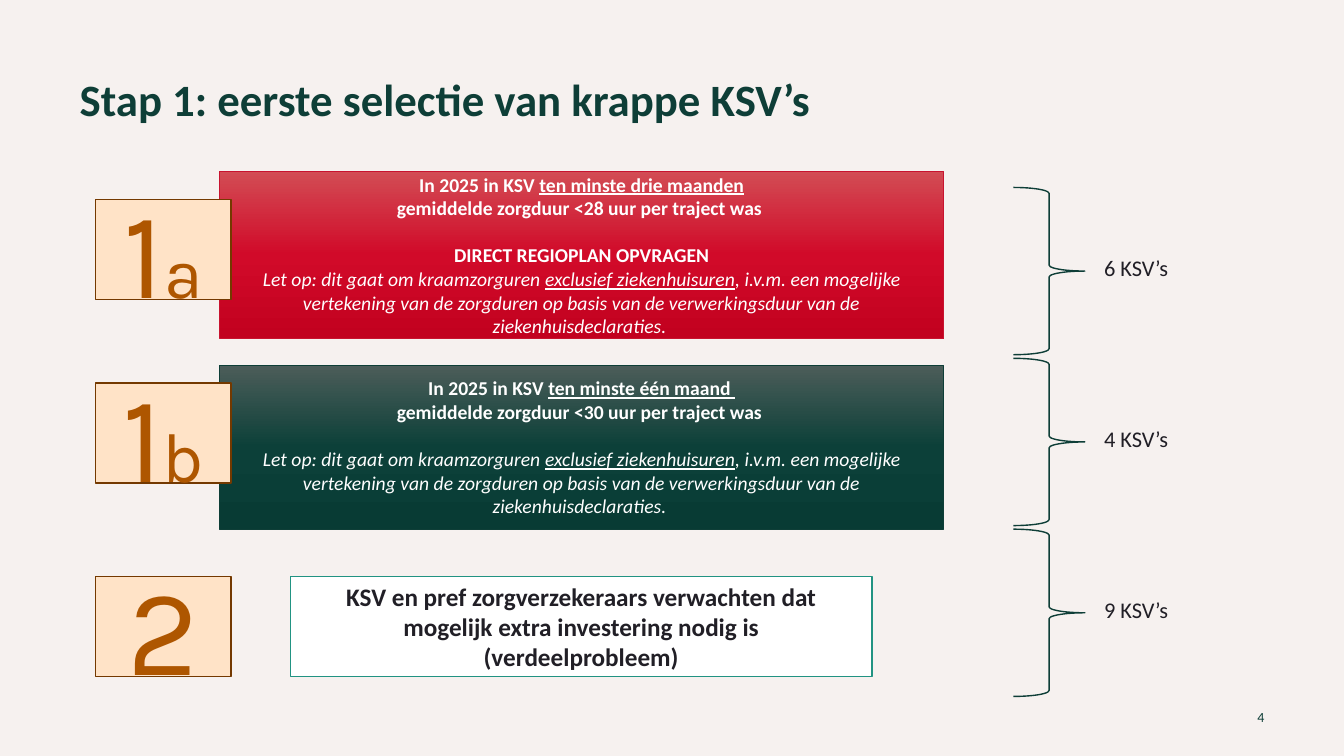
from copy import deepcopy
from pptx import Presentation
from pptx.dml.color import RGBColor
from pptx.enum.shapes import MSO_SHAPE as Shape
from pptx.enum.text import MSO_ANCHOR as Anchor, MSO_AUTO_SIZE as AutoSize, PP_ALIGN as Align
from pptx.oxml.ns import qn
from pptx.util import Inches, Pt

GREEN, DARK, WHITE = "0E3E37", "211F26", "FFFFFF"
BOLD, BOLD_LINK = {"bold": True}, {"bold": True, "underline": True}
ITALIC, ITALIC_LINK = {"italic": True}, {"italic": True, "underline": True}


def write(shape, paragraphs, size, color, font="Calibri", align=Align.CENTER,
          anchor=Anchor.MIDDLE, inset=None, line_spacing=None, gaps=None):
    """Fill a shape with paragraphs of (text, run format) pairs; gaps maps paragraph index to space before."""
    frame = shape.text_frame
    frame.word_wrap, frame.auto_size = True, AutoSize.NONE
    frame.vertical_anchor = anchor
    if inset is not None:
        frame.margin_left = frame.margin_top = frame.margin_right = frame.margin_bottom = Inches(inset)
    for index, runs in enumerate(paragraphs):
        para = frame.paragraphs[0] if index == 0 else frame.add_paragraph()
        para.alignment = align
        if line_spacing:
            para.line_spacing = line_spacing
        if gaps and index in gaps:
            para.space_before = Pt(gaps[index])
        for text, style in runs:
            span = para.add_run()
            span.text = text
            span.font.name = font
            span.font.size = Pt(style.get("size", size))
            span.font.bold = style.get("bold", False)
            span.font.italic = style.get("italic", False)
            span.font.underline = style.get("underline", False)
            span.font.color.rgb = RGBColor.from_string(color)


def add_box(place, fill, line, width=1, kind=Shape.RECTANGLE):
    """Add a shape; fill is a colour, a list of top-to-bottom gradient colours, or None."""
    box = slide.shapes.add_shape(kind, *map(Inches, place))
    box.shadow.inherit = False
    box.line.color.rgb = RGBColor.from_string(line)
    box.line.width = Pt(width)
    if fill is None:
        box.fill.background()
    elif isinstance(fill, str):
        box.fill.solid()
        box.fill.fore_color.rgb = RGBColor.from_string(fill)
    else:
        box.fill.gradient()
        box.fill.gradient_angle = 270
        stops = box._element.spPr.find(qn("a:gradFill")).find(qn("a:gsLst"))
        stops.insert(1, deepcopy(stops[0]))
        for index, stop in enumerate(box.fill.gradient_stops):
            stop.position = index / 2
            stop.color.rgb = RGBColor.from_string(fill[index])
    return box


deck = Presentation()
deck.slide_width, deck.slide_height = Inches(13.33), Inches(7.5)
slide = deck.slides.add_slide(deck.slide_layouts[5])
slide.background.fill.solid()
slide.background.fill.fore_color.rgb = RGBColor.from_string("F6F1EF")

title = slide.shapes.title
title.left, title.top, title.width, title.height = map(Inches, (0.79, 0.79, 11.56, 0.91))
write(title, [[("Stap 1: eerste selectie van krappe KSV’s", BOLD)]], 32, GREEN,
      align=Align.LEFT, anchor=Anchor.TOP, inset=0, line_spacing=0.85)

# Criteria
note = [
    ("Let op: dit gaat om kraamzorguren ", ITALIC),
    ("exclusief ziekenhuisuren", ITALIC_LINK),
    (", i.v.m. een mogelijke vertekening van de zorgduren op basis van de "
     "verwerkingsduur van de ziekenhuisdeclaraties. ", ITALIC),
]
criteria = [
    (1.7, 1.66, ["D24C54", "D10A29", "C2011F"], "C8132F", "ten minste drie maanden", 28,
     [[("DIRECT REGIOPLAN OPVRAGEN", BOLD)]]),
    (3.62, 1.63, ["4C5D59", "0C4039", "083B34"], GREEN, "ten minste één maand ", 30, []),
]
for top, height, gradient, line, period, hours, action in criteria:
    box = add_box((2.18, top, 7.18, height), gradient, line, 0.5)
    condition = [
        [("In 2025 in KSV ", BOLD), (period, BOLD_LINK)],
        [(f"gemiddelde zorgduur <{hours} uur per traject was ", BOLD)],
    ]
    write(box, condition + action + [note], 14, WHITE, gaps={2: 17})

expectation = add_box((2.88, 5.72, 5.77, 0.99), WHITE, "219382")
write(expectation, [
    [("KSV en pref zorgverzekeraars verwachten dat mogelijk extra investering nodig is", BOLD)],
    [("(verdeelprobleem)", BOLD)],
], 18, DARK)

# Step numbers
for top, number, letter in [(1.98, "1", "a"), (3.8, "1", "b"), (5.72, "2", "")]:
    badge = add_box((0.95, top, 1.34, 0.99), "FFE3C7", "743900")
    runs = [(number, {})] + ([(letter, {"size": 50})] if letter else [])
    write(badge, [runs], 88, "AE5600", font="Karla")

# Braces with counts
for row, count in enumerate([6, 4, 9]):
    top = 1.86 + row * 1.695
    add_box((10.05, top, 0.71, 1.66), None, GREEN, kind=Shape.RIGHT_BRACE)
    label = slide.shapes.add_textbox(*map(Inches, (10.95, top + 0.69, 0.71, 0.36)))
    write(label, [[(f"{count} KSV’s", {})]], 16, DARK, align=Align.LEFT,
          anchor=Anchor.TOP, inset=0, line_spacing=0.9)

page_number = slide.shapes.add_textbox(*map(Inches, (12.15, 7.03, 0.39, 0.16)))
write(page_number, [[("4", {})]], 10, GREEN, align=Align.RIGHT, inset=0)

deck.save("out.pptx")
